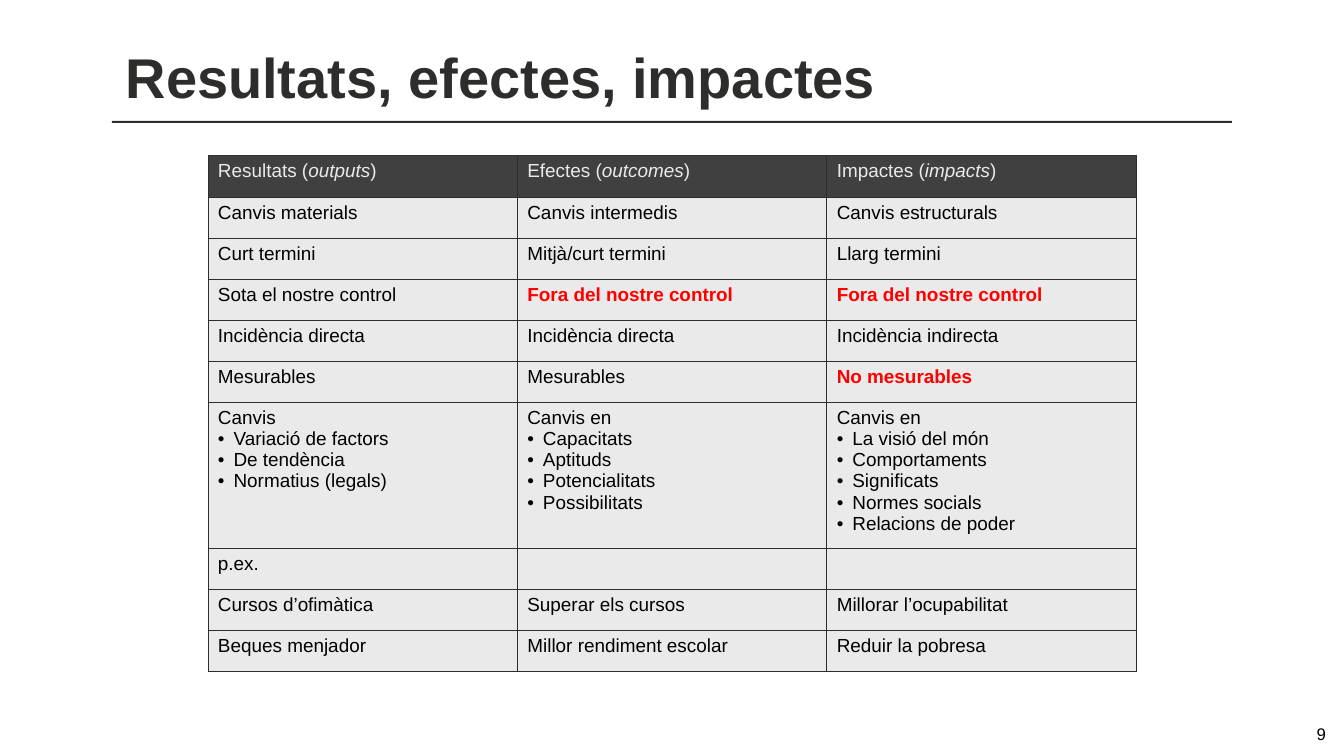
from dataclasses import dataclass

from lxml.etree import SubElement
from pptx import Presentation
from pptx.dml.color import RGBColor
from pptx.enum.shapes import MSO_SHAPE
from pptx.enum.text import MSO_ANCHOR, MSO_AUTO_SIZE, PP_ALIGN
from pptx.oxml.ns import qn
from pptx.util import Inches, Pt

TITLE = "Resultats, efectes, impactes"
PAGE = "9"
HEADERS = [("Resultats", "outputs"), ("Efectes", "outcomes"), ("Impactes", "impacts")]
ROWS = [
    ["Canvis materials", "Canvis intermedis", "Canvis estructurals"],
    ["Curt termini", "Mitjà/curt termini", "Llarg termini"],
    ["Sota el nostre control", "Fora del nostre control", "Fora del nostre control"],
    ["Incidència directa", "Incidència directa", "Incidència indirecta"],
    ["Mesurables", "Mesurables", "No mesurables"],
    [
        ["Canvis", "Variació de factors", "De tendència", "Normatius (legals)"],
        ["Canvis en", "Capacitats", "Aptituds", "Potencialitats", "Possibilitats"],
        ["Canvis en", "La visió del món", "Comportaments", "Significats",
         "Normes socials", "Relacions de poder"],
    ],
    ["p.ex.", "", ""],
    ["Cursos d’ofimàtica", "Superar els cursos", "Millorar l’ocupabilitat"],
    ["Beques menjador", "Millor rendiment escolar", "Reduir la pobresa"],
]
WARNINGS = {"Fora del nostre control", "No mesurables"}


@dataclass(frozen=True)
class Theme:
    font: str = "Arial"
    dark: str = "2E2D2C"
    header: str = "404040"
    light: str = "EAEAEA"
    black: str = "000000"
    warning: str = "FF0000"
    title_size: int = 80
    table_size: int = 27
    page_size: int = 24


T = Theme()
SLIDE_W, SLIDE_H = 26.67, 15
MARGIN = SLIDE_W / 12
CONTENT_W = SLIDE_W - 2 * MARGIN
TABLE_TOP, COL_W, ROW_H, LIST_H = 3.09, 6.14, 0.815, 2.9
TABLE_LEFT = (SLIDE_W - len(HEADERS) * COL_W) / 2
INDENT = Inches(0.31)


def set_attrs(target, values):
    for name, value in values.items():
        setattr(target, name, value)


def set_insets(target, x, y):
    set_attrs(target, dict(margin_left=Inches(x), margin_right=Inches(x),
                           margin_top=Inches(y), margin_bottom=Inches(y)))


def add_run(p, text, size, color, **style):
    r = p.add_run()
    r.text = text
    set_attrs(r.font, dict(name=T.font, size=Pt(size), **style))
    r.font.color.rgb = RGBColor.from_string(color)


def add_bullet(p):
    pPr = p._p.get_or_add_pPr()
    pPr.set("marL", str(INDENT))
    pPr.set("indent", str(-INDENT))
    SubElement(pPr, qn("a:buFont"), typeface=T.font)
    SubElement(pPr, qn("a:buChar"), char="•")


def style_cell(cell, fill):
    set_insets(cell, 0.2, 0.1)
    tcPr = cell._tc.get_or_add_tcPr()
    for side in ("L", "R", "T", "B"):
        ln = SubElement(tcPr, qn(f"a:ln{side}"), w=str(Pt(1)))
        SubElement(SubElement(ln, qn("a:solidFill")), qn("a:srgbClr"), val=T.dark)
    cell.fill.solid()
    cell.fill.fore_color.rgb = RGBColor.from_string(fill)


def fill_header(cell, term, english):
    style_cell(cell, T.header)
    p = cell.text_frame.paragraphs[0]
    for text, italic in ((f"{term} (", False), (english, True), (")", False)):
        add_run(p, text, T.table_size, T.light, italic=italic, bold=False)


def fill_body(cell, content):
    style_cell(cell, T.light)
    lines = content if isinstance(content, list) else [content]
    tf = cell.text_frame
    for i, text in enumerate(lines):
        p = tf.add_paragraph() if i else tf.paragraphs[0]
        if i:
            add_bullet(p)
        if text:
            warn = text in WARNINGS
            add_run(p, text, T.table_size, T.warning if warn else T.black, bold=warn)


def add_title(s):
    sp = s.shapes.title
    set_attrs(sp, dict(left=Inches(MARGIN), top=Inches(0.73),
                       width=Inches(CONTENT_W), height=Inches(1.57)))
    tf = sp.text_frame
    set_attrs(tf, dict(word_wrap=True, auto_size=MSO_AUTO_SIZE.NONE,
                       vertical_anchor=MSO_ANCHOR.BOTTOM))
    set_insets(tf, 0.27, 0.13)
    p = tf.paragraphs[0]
    p.alignment = PP_ALIGN.LEFT
    add_run(p, TITLE, T.title_size, T.dark, bold=True)

    rule = s.shapes.add_shape(MSO_SHAPE.RECTANGLE, Inches(MARGIN), Inches(2.4),
                              Inches(CONTENT_W), Inches(0.04))
    rule.shadow.inherit = False
    rule.fill.solid()
    rule.fill.fore_color.rgb = RGBColor.from_string(T.dark)
    rule.line.fill.background()


def add_comparison(s):
    heights = [ROW_H] + [LIST_H if isinstance(row[0], list) else ROW_H for row in ROWS]
    frame = s.shapes.add_table(len(heights), len(HEADERS), Inches(TABLE_LEFT),
                               Inches(TABLE_TOP), Inches(COL_W * len(HEADERS)),
                               Inches(sum(heights)))
    table = frame.table
    for column in table.columns:
        column.width = Inches(COL_W)
    for row, height in zip(table.rows, heights):
        row.height = Inches(height)
    for c, header in enumerate(HEADERS):
        fill_header(table.cell(0, c), *header)
    for r, row in enumerate(ROWS, 1):
        for c, content in enumerate(row):
            fill_body(table.cell(r, c), content)


def add_page_number(s):
    sp = s.shapes.add_textbox(Inches(SLIDE_W - 3.26), Inches(SLIDE_H - 0.65),
                              Inches(3), Inches(0.4))
    tf = sp.text_frame
    set_attrs(tf, dict(word_wrap=True, vertical_anchor=MSO_ANCHOR.MIDDLE))
    set_insets(tf, 0.1, 0.1)
    p = tf.paragraphs[0]
    p.alignment = PP_ALIGN.RIGHT
    add_run(p, PAGE, T.page_size, T.black)


def main():
    prs = Presentation()
    set_attrs(prs, dict(slide_width=Inches(SLIDE_W), slide_height=Inches(SLIDE_H)))
    s = prs.slides.add_slide(prs.slide_layouts[5])
    add_title(s)
    add_comparison(s)
    add_page_number(s)
    prs.save("out.pptx")


if __name__ == "__main__":
    main()
